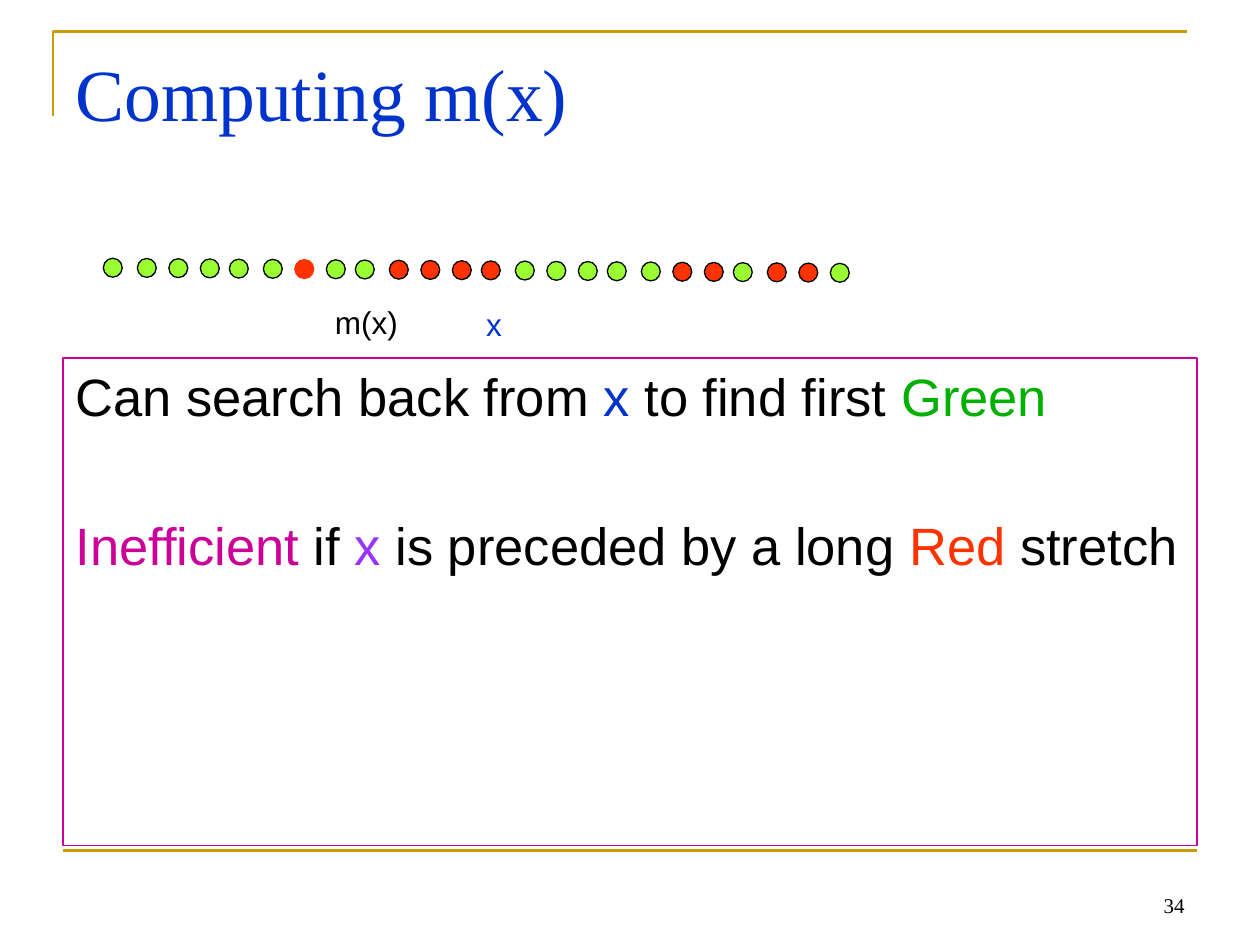
from lxml import etree
from pptx import Presentation
from pptx.dml.color import RGBColor
from pptx.enum.shapes import MSO_CONNECTOR, MSO_SHAPE
from pptx.enum.text import MSO_ANCHOR, MSO_AUTO_SIZE, PP_ALIGN
from pptx.oxml.ns import qn
from pptx.util import Inches, Pt

OVAL = MSO_SHAPE.OVAL
LINE = MSO_CONNECTOR.STRAIGHT
LEFT, RIGHT = PP_ALIGN.LEFT, PP_ALIGN.RIGHT
MIDDLE, TOP, BOTTOM = MSO_ANCHOR.MIDDLE, MSO_ANCHOR.TOP, MSO_ANCHOR.BOTTOM
FIXED = MSO_AUTO_SIZE.NONE

COLORS = {
    "black": "000000", "blue": "0033CC", "gold": "CC9900", "pink": "CC0099",
    "purple": "9933FF", "green": "00B000", "red": "FF3300", "lime": "99FF33",
}
SANS, SERIF = "Arial", "Times New Roman"

TITLE = [("Computing m(x)", "blue")]
BODY = [
    [("Can search back from ", "black"), ("x", "blue"),
     (" to find first ", "black"), ("Green", "green")],
    [("Inefficient", "pink"), (" if ", "black"), ("x", "purple"),
     (" is preceded by a long ", "black"), ("Red", "red"),
     (" stretch", "black")],
]
DOTS = "GGGGGGRGGRRRRGGGGGRRGRRG"
BARE = 6  # the red dot without a black rim
STEPS = (0.09, 0.34, 0.59, 0.82)  # dot places within each inch
LABELS = [  # text, colour, place, font, size, format
    ("x", "blue", (3.76, 2.37, 0.33, 0.4), SANS, 18, {}),
    ("m(x)", "black", (2.56, 2.36, 0.7, 0.4), SANS, 18, {}),
    ("34", "black", (7.17, 6.83, 2.33, 0.5), SERIF, 12,
     {"word_wrap": True, "vertical_anchor": BOTTOM}),
]


def color(name):
    return RGBColor.from_string(COLORS[name])


def box(*nums):
    return [Inches(n) for n in nums]


def place(shape, *nums):
    for key, val in zip(("left", "top", "width", "height"), box(*nums)):
        setattr(shape, key, val)


def style(item, form):
    for key, val in form.items():
        setattr(item, key, val)


def write(para, runs, font, size):
    for text, tint in runs:
        run = para.add_run()
        run.text = text
        style(run.font, {"name": font, "size": Pt(size)})
        run.font.color.rgb = color(tint)


def rim(shape, tint, width):
    shape.line.color.rgb = color(tint)
    shape.line.width = Pt(width)


def add_frame(slide):
    pen = slide.shapes.build_freeform(Inches(0.42), Inches(0.92))
    pen.add_line_segments([box(0.42, 0.25), box(9.42, 0.25)], close=False)
    edge = pen.convert_to_shape()
    edge.fill.background()
    edge.shadow.inherit = False
    rule = slide.shapes.add_connector(LINE, *box(0.5, 6.75, 9.5, 6.75))
    etree.SubElement(rule._element.spPr, qn("a:effectLst"))
    for part in (edge, rule):
        rim(part, "gold", 1.5)


def add_title(slide):
    title = slide.shapes.title
    place(title, 0.5, 0.3, 9, 0.86)
    style(title.text_frame, {"vertical_anchor": MIDDLE, "auto_size": FIXED})
    para = title.text_frame.paragraphs[0]
    para.alignment = LEFT
    write(para, TITLE, SERIF, 42)


def add_body(slide):
    body = slide.placeholders[1]
    place(body, 0.5, 2.84, 9, 3.87)
    rim(body, "pink", 0.75)
    frame = body.text_frame
    style(frame, {"vertical_anchor": TOP, "auto_size": FIXED})
    for i, runs in enumerate(BODY):
        para = frame.add_paragraph() if i else frame.paragraphs[0]
        if i:
            para.space_before = Pt(49)
        props = para._p.get_or_add_pPr()
        props.set("marL", str(Inches(0.38)))
        props.set("indent", str(-Inches(0.38)))
        etree.SubElement(props, qn("a:buNone"))
        write(para, runs, SANS, 30)


def add_dots(slide):
    """Draw the row of dots, which sinks slightly to the right."""
    group = slide.shapes.add_group_shape()
    for i, kind in enumerate(DOTS):
        inch, step = divmod(i + 3, len(STEPS))
        top = 2.05 + 0.04 * i / (len(DOTS) - 1)
        dot = group.shapes.add_shape(
            OVAL, *box(inch + STEPS[step], top, 0.15, 0.15))
        dot.shadow.inherit = False
        dot.fill.solid()
        dot.fill.fore_color.rgb = color("lime" if kind == "G" else "red")
        rim(dot, "red" if i == BARE else "black", 0.75)


def add_labels(slide):
    for text, tint, spot, font, size, form in LABELS:
        frame = slide.shapes.add_textbox(*box(*spot)).text_frame
        style(frame, {"word_wrap": False, **form})
        para = frame.paragraphs[0]
        para.alignment = RIGHT if frame.word_wrap else LEFT
        write(para, [(text, tint)], font, size)


def main():
    deck = Presentation()
    deck.slide_width, deck.slide_height = box(10, 7.5)
    slide = deck.slides.add_slide(deck.slide_layouts[1])
    for add in (add_frame, add_title, add_body, add_dots, add_labels):
        add(slide)
    deck.save("out.pptx")


if __name__ == "__main__":
    main()
